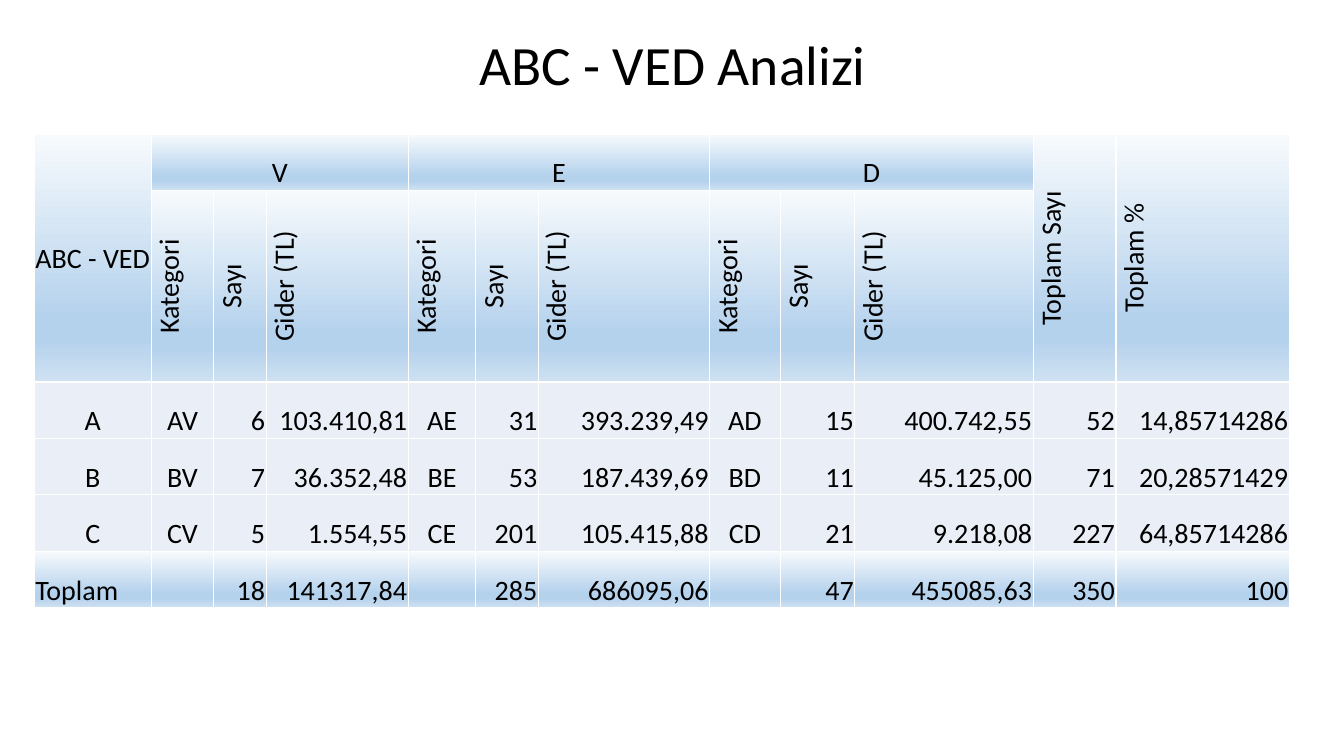
from dataclasses import dataclass

from lxml import etree
from pptx import Presentation
from pptx.dml.color import RGBColor
from pptx.enum.text import MSO_ANCHOR, MSO_AUTO_SIZE, PP_ALIGN
from pptx.oxml.ns import qn
from pptx.util import Inches, Pt

LEFT, CENTER, RIGHT = PP_ALIGN.LEFT, PP_ALIGN.CENTER, PP_ALIGN.RIGHT
MIDDLE, BOTTOM = MSO_ANCHOR.MIDDLE, MSO_ANCHOR.BOTTOM
NO_AUTOFIT = MSO_AUTO_SIZE.NONE


@dataclass(frozen=True)
class Theme:
    font: str = "Calibri"
    title_size: float = 39.6
    cell_size: float = 20
    ink: str = "000000"
    border: str = "FFFFFF"
    border_width: float = 1
    body_fill: str = "EAEFF7"
    band_stops: tuple = ((0, "F7FAFD"), (74, "B5D2EC"), (83, "B5D2EC"), (100, "CEE1F2"))


THEME = Theme()

COLUMN_WIDTHS = (1.16, 0.62, 0.52, 1.41, 0.67, 0.62, 1.7, 0.7, 0.74, 1.77, 0.82, 1.72)
ROW_HEIGHTS = (0.56, 1.9, 0.56, 0.56, 0.56, 0.56)
CLASSES = ("V", "E", "D")
MEASURES = ("Kategori", "Sayı", "Gider (TL)")
CATEGORY_COLUMNS = (0, 1, 4, 7)
TOTAL_COLUMNS = {10: "Toplam Sayı", 11: "Toplam %"}
BODY_ROWS = (
    ("A", "AV", "6", "103.410,81", "AE", "31", "393.239,49",
     "AD", "15", "400.742,55", "52", "14,85714286"),
    ("B", "BV", "7", "36.352,48", "BE", "53", "187.439,69",
     "BD", "11", "45.125,00", "71", "20,28571429"),
    ("C", "CV", "5", "1.554,55", "CE", "201", "105.415,88",
     "CD", "21", "9.218,08", "227", "64,85714286"),
)
TOTAL_ROW = ("Toplam", "", "18", "141317,84", "", "285", "686095,06",
             "", "47", "455085,63", "350", "100")


def write_text(frame, text, size=THEME.cell_size, align=CENTER, line_spacing=None):
    para = frame.paragraphs[0]
    para.alignment = align
    para.line_spacing = line_spacing
    para.font.size = Pt(size)
    if text:
        span = para.add_run()
        span.text = text
        span.font.name = THEME.font
        span.font.size = Pt(size)
        span.font.bold = False
        span.font.color.rgb = RGBColor.from_string(THEME.ink)


def add_color(parent, color):
    etree.SubElement(parent, qn("a:srgbClr"), val=color)


def add_borders(cell):
    properties = cell._tc.get_or_add_tcPr()
    for side in ("L", "R", "T", "B"):
        line = etree.SubElement(properties, qn(f"a:ln{side}"), w=str(Pt(THEME.border_width)))
        add_color(etree.SubElement(line, qn("a:solidFill")), THEME.border)


def fill_band(cell):
    gradient = etree.SubElement(cell._tc.get_or_add_tcPr(), qn("a:gradFill"), rotWithShape="1")
    stops = etree.SubElement(gradient, qn("a:gsLst"))
    for position, color in THEME.band_stops:
        add_color(etree.SubElement(stops, qn("a:gs"), pos=str(position * 1000)), color)
    etree.SubElement(gradient, qn("a:lin"), ang="5400000", scaled="0")


def style_cell(cell, banded):
    cell.margin_left = cell.margin_right = cell.margin_top = Inches(0.01)
    cell.margin_bottom = 0
    cell.vertical_anchor = BOTTOM
    add_borders(cell)
    if banded:
        fill_band(cell)
    else:
        cell.fill.solid()
        cell.fill.fore_color.rgb = RGBColor.from_string(THEME.body_fill)


def write_vertical(cell, text):
    cell._tc.get_or_add_tcPr().set("vert", "vert270")
    write_text(cell.text_frame, text)


def write_headers(table):
    corner = table.cell(0, 0)
    corner.merge(table.cell(1, 0))
    corner.vertical_anchor = MIDDLE
    write_text(corner.text_frame, "ABC - VED")
    for index, name in enumerate(CLASSES):
        first = 1 + index * len(MEASURES)
        group = table.cell(0, first)
        group.merge(table.cell(0, first + len(MEASURES) - 1))
        write_text(group.text_frame, name)
        for offset, measure in enumerate(MEASURES):
            write_vertical(table.cell(1, first + offset), measure)
    for column, name in TOTAL_COLUMNS.items():
        total = table.cell(0, column)
        total.merge(table.cell(1, column))
        write_vertical(total, name)


def write_values(table):
    for row, values in enumerate(BODY_ROWS + (TOTAL_ROW,), start=2):
        for column, value in enumerate(values):
            align = CENTER if column in CATEGORY_COLUMNS else RIGHT
            if value == TOTAL_ROW[0]:
                align = LEFT
            write_text(table.cell(row, column).text_frame, value, align=align)


def add_analysis_table(page):
    table = page.shapes.add_table(
        len(ROW_HEIGHTS), len(COLUMN_WIDTHS), Inches(0.34), Inches(1.33),
        Inches(sum(COLUMN_WIDTHS)), Inches(sum(ROW_HEIGHTS))).table
    table.first_row = table.horz_banding = False
    for column, width in zip(table.columns, COLUMN_WIDTHS):
        column.width = Inches(width)
    for index, height in enumerate(ROW_HEIGHTS):
        table.rows[index].height = Inches(height)
        banded = index < 2 or index == len(ROW_HEIGHTS) - 1
        for cell in table.rows[index].cells:
            style_cell(cell, banded)
    write_headers(table)
    write_values(table)


def add_title(page, text):
    title = page.shapes.title
    title.left, title.top = Inches(0.92), Inches(0.4)
    title.width, title.height = Inches(11.5), Inches(0.55)
    title.text_frame.auto_size = NO_AUTOFIT
    title.text_frame.vertical_anchor = MIDDLE
    write_text(title.text_frame, text, size=THEME.title_size, line_spacing=0.9)


def main():
    deck = Presentation()
    deck.slide_width, deck.slide_height = Inches(13.33), Inches(7.5)
    page = deck.slides.add_slide(deck.slide_layouts[5])
    add_title(page, "ABC - VED Analizi")
    add_analysis_table(page)
    deck.save("out.pptx")


if __name__ == "__main__":
    main()
